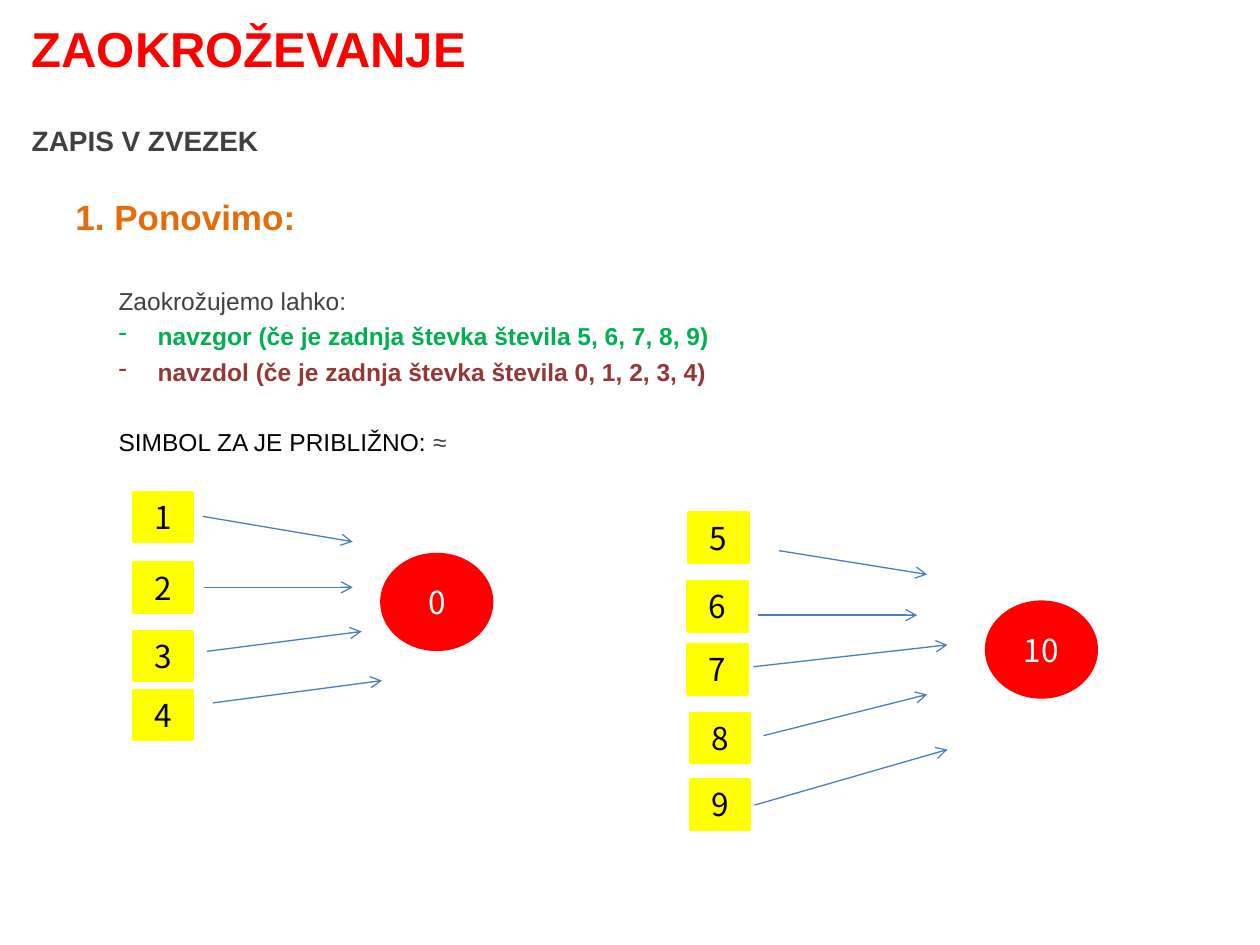
from dataclasses import dataclass

from lxml.etree import SubElement
from pptx import Presentation
from pptx.dml.color import RGBColor
from pptx.enum.shapes import MSO_CONNECTOR as Connector, MSO_SHAPE as Shape
from pptx.enum.text import MSO_ANCHOR as Anchor, PP_ALIGN as Align
from pptx.oxml.ns import qn
from pptx.util import Cm, Pt


@dataclass(frozen=True)
class Theme:
    text_font: str = "Arial"
    digit_font: str = "Noto Sans CJK KR"
    title_size: float = 28
    heading_size: float = 20
    digit_size: float = 18
    subtitle_size: float = 16
    body_size: float = 14
    red: str = "FF0000"
    yellow: str = "FFFF00"
    grey: str = "404040"
    orange: str = "E46C0A"
    green: str = "00B050"
    maroon: str = "953735"
    blue: str = "4B7EBC"
    black: str = "000000"
    white: str = "FFFFFF"


THEME = Theme()
TILE_SIZE = (1.19, 0.99)
TARGET_SIZE = (2.21, 1.91)

DOWN_TILES = {"1": (2.69, 9.93), "2": (2.69, 11.35), "3": (2.69, 12.73), "4": (2.69, 13.92)}
UP_TILES = {
    "5": (13.89, 10.34),
    "6": (13.87, 11.73),
    "7": (13.87, 13),
    "8": (13.92, 14.38),
    "9": (13.92, 15.72),
}
DOWN_ARROWS = [
    (4.09, 10.41, 7.11, 10.92),
    (4.11, 11.84, 7.11, 11.84),
    (4.17, 13.13, 7.29, 12.73),
    (4.29, 14.17, 7.7, 13.72),
]
UP_ARROWS = [
    (15.7, 11.1, 18.69, 11.58),
    (15.29, 12.4, 18.49, 12.4),
    (15.19, 13.44, 19.1, 13),
    (15.39, 14.83, 18.69, 14),
    (15.21, 16.23, 19.1, 15.11),
]


def color(value):
    return RGBColor.from_string(value)


def add_run(para, text, size, tone, bold=False, font=THEME.text_font):
    span = para.add_run()
    span.text = text
    span.font.name = font
    span.font.size = Pt(size)
    span.font.bold = bold
    span.font.color.rgb = color(tone)


def set_frame(frame, left=0.25, top=0.13, anchor=Anchor.TOP):
    frame.word_wrap = True
    frame.vertical_anchor = anchor
    frame.margin_left, frame.margin_top = Cm(left), Cm(top)
    frame.margin_right, frame.margin_bottom = Cm(0.25), Cm(0.13)


def add_para(frame, space):
    para = frame.add_paragraph()
    para.alignment = Align.LEFT
    para.space_before = Pt(space)
    return para


def set_bullet(para):
    props = para._p.get_or_add_pPr()
    props.set("marL", str(Cm(0.79)))
    props.set("indent", str(-Cm(0.79)))
    SubElement(props, qn("a:buChar")).set("char", "-")


def fill_title(page):
    title = page.shapes.title
    title.left, title.top, title.width, title.height = Cm(0), Cm(0.05), Cm(25.4), Cm(2.97)
    frame = title.text_frame
    set_frame(frame, left=0.64, top=0.33)
    first = frame.paragraphs[0]
    first.alignment = Align.LEFT
    add_run(first, "ZAOKROŽEVANJE", THEME.title_size, THEME.red, True)
    second = add_para(frame, 26)
    add_run(second, "ZAPIS V ZVEZEK", THEME.subtitle_size, THEME.grey, True)


def add_heading(page):
    box = page.shapes.add_textbox(Cm(1.27), Cm(3.73), Cm(22.86), Cm(1.27))
    set_frame(box.text_frame, anchor=Anchor.MIDDLE)
    para = box.text_frame.paragraphs[0]
    add_run(para, "1. Ponovimo:", THEME.heading_size, THEME.orange, True)


def add_rules(page):
    box = page.shapes.add_textbox(Cm(1.3), Cm(5.63), Cm(22.86), Cm(10))
    frame = box.text_frame
    set_frame(frame, left=1.09)
    add_run(frame.paragraphs[0], "Zaokrožujemo lahko:", THEME.body_size, THEME.grey)
    for text, tone in (
        ("navzgor (če je zadnja števka števila 5, 6, 7, 8, 9)", THEME.green),
        ("navzdol (če je zadnja števka števila 0, 1, 2, 3, 4)", THEME.maroon),
    ):
        para = add_para(frame, 3.6)
        set_bullet(para)
        add_run(para, text, THEME.body_size, tone, True)
    symbol = add_para(frame, 23.3)
    add_run(symbol, "SIMBOL ZA JE PRIBLIŽNO: ", THEME.body_size, THEME.black)
    add_run(symbol, "≈", THEME.body_size, THEME.grey)


def add_digit(page, kind, text, place, size, fill, tone):
    shape = page.shapes.add_shape(kind, *map(Cm, place + size))
    shape.shadow.inherit = False
    shape.fill.solid()
    shape.fill.fore_color.rgb = color(fill)
    shape.line.color.rgb = color(fill)
    shape.line.width = Pt(2)
    frame = shape.text_frame
    frame.vertical_anchor = Anchor.MIDDLE
    frame.margin_left = frame.margin_right = frame.margin_top = frame.margin_bottom = Cm(0)
    para = frame.paragraphs[0]
    para.alignment = Align.CENTER
    add_run(para, text, THEME.digit_size, tone, font=THEME.digit_font)


def add_arrow(page, ends):
    arrow = page.shapes.add_connector(Connector.STRAIGHT, *map(Cm, ends))
    arrow.line.color.rgb = color(THEME.blue)
    arrow.line.width = Pt(0.75)
    SubElement(arrow.line._get_or_add_ln(), qn("a:tailEnd")).set("type", "arrow")
    SubElement(arrow._element.spPr, qn("a:effectLst"))


def add_group(page, tiles, arrows, target, place):
    for digit, corner in tiles.items():
        add_digit(page, Shape.RECTANGLE, digit, corner, TILE_SIZE, THEME.yellow, THEME.black)
    for ends in arrows:
        add_arrow(page, ends)
    add_digit(page, Shape.OVAL, target, place, TARGET_SIZE, THEME.red, THEME.white)


def main():
    deck = Presentation()
    deck.slide_width, deck.slide_height = Cm(25.4), Cm(19.05)
    page = deck.slides.add_slide(deck.slide_layouts[5])
    fill_title(page)
    add_heading(page)
    add_rules(page)
    add_group(page, DOWN_TILES, DOWN_ARROWS, "0", (7.7, 11.18))
    add_group(page, UP_TILES, UP_ARROWS, "10", (19.89, 12.14))
    deck.save("out.pptx")


if __name__ == "__main__":
    main()
